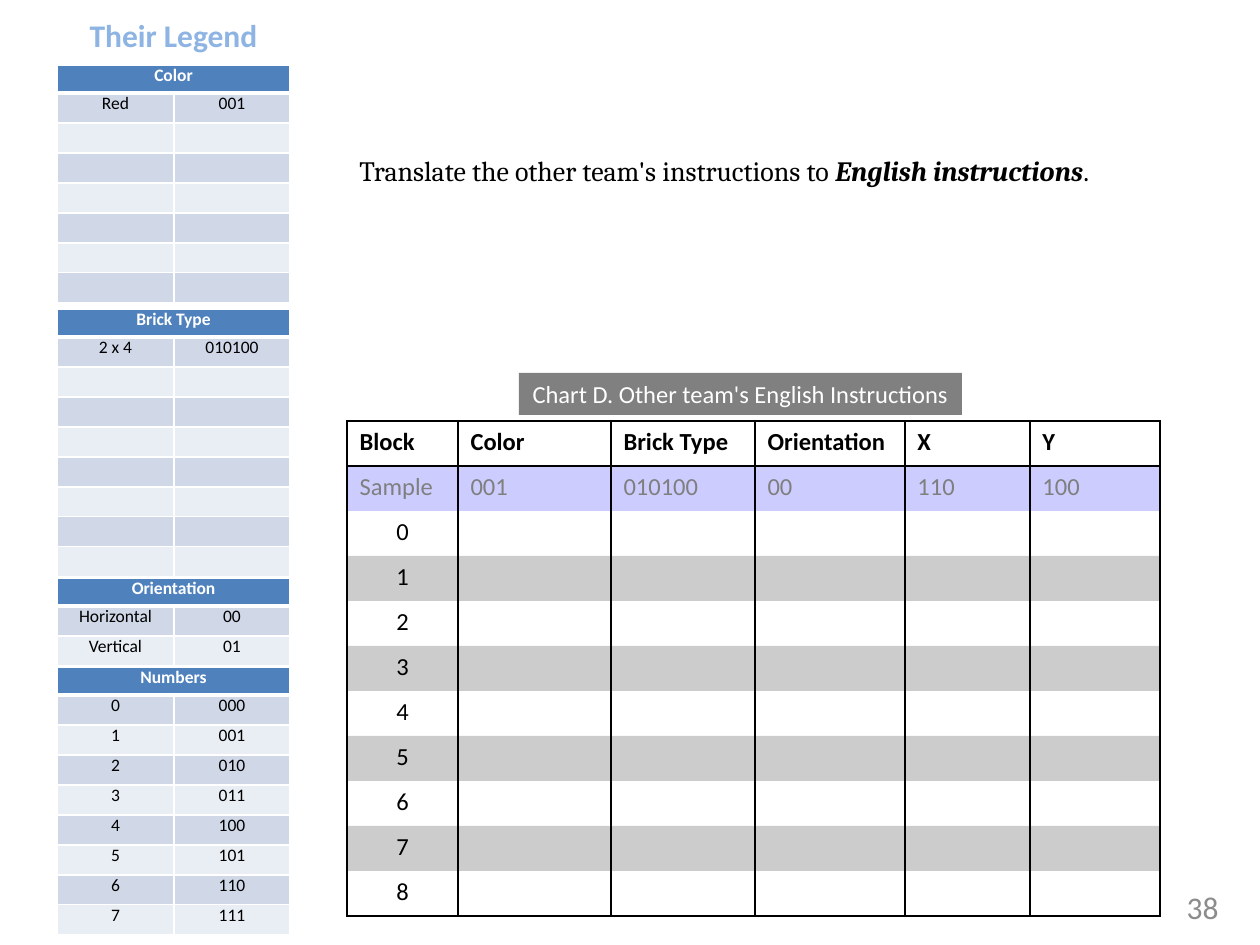
from lxml import etree
from pptx import Presentation
from pptx.dml.color import RGBColor
from pptx.enum.shapes import MSO_SHAPE
from pptx.enum.text import MSO_ANCHOR, MSO_AUTO_SIZE, PP_ALIGN
from pptx.oxml.ns import qn
from pptx.util import Pt

RECTANGLE = MSO_SHAPE.RECTANGLE
TOP, MIDDLE = MSO_ANCHOR.TOP, MSO_ANCHOR.MIDDLE
FIT, FIXED = MSO_AUTO_SIZE.SHAPE_TO_FIT_TEXT, MSO_AUTO_SIZE.NONE
LEFT, CENTER, RIGHT = PP_ALIGN.LEFT, PP_ALIGN.CENTER, PP_ALIGN.RIGHT
PX = 914400 / 126
NO_STYLE = "{2D5ABB26-0587-4C30-8999-92F81FD0307C}"

THEME = {
    "sans": "Calibri", "serif": "Cambria",
    "black": "000000", "white": "FFFFFF", "blue": "0000FF",
    "header": "4F81BD", "bands": ("D0D8E8", "E9EDF4"),
    "sample": "7F7F7F", "caption": "808080", "number": "8C8C8C", "title": "8EB4E3",
    "legend_size": 10, "chart_size": 14, "body_size": 16, "title_size": 18,
    "tint": 20000,
}


def write(paragraph, text, size, color, align=LEFT, name=THEME["sans"], **emphasis):
    """Add one run; an empty text only sets the line height."""
    paragraph.alignment = align
    if not text:
        etree.SubElement(paragraph._p, qn("a:endParaRPr"), sz=str(size * 100))
        return
    run = paragraph.add_run()
    run.text = text
    for key, value in {"size": Pt(size), "name": name, **emphasis}.items():
        setattr(run.font, key, value)
    run.font.color.rgb = RGBColor.from_string(color)


def paint_cell(cell, fill, borders, color, alpha=None):
    """Draw borders, given as side to points, and then the fill, as the schema orders them."""
    properties = cell._tc.get_or_add_tcPr()
    for side in "LRTB":
        if side in borders:
            line = etree.SubElement(properties, qn(f"a:ln{side}"), w=str(Pt(borders[side])))
            solid = etree.SubElement(line, qn("a:solidFill"))
            etree.SubElement(solid, qn("a:srgbClr"), val=color)
    if fill is None:
        cell.fill.background()
        return
    cell.fill.solid()
    cell.fill.fore_color.rgb = RGBColor.from_string(fill)
    if alpha:
        rgb = properties.find(f"{qn('a:solidFill')}/{qn('a:srgbClr')}")
        etree.SubElement(rgb, qn("a:alpha"), val=str(alpha))


prs = Presentation()
prs.slide_width, prs.slide_height = int(1260 * PX), int(945 * PX)
slide = prs.slides.add_slide(prs.slide_layouts[6])

# Each table: left, top, column widths, row heights, rows of text
BLANK = ("", "")
legends = [
    (65, "Color", [("Red", "001")] + [BLANK] * 6),
    (309, "Brick Type", [("2 x 4", "010100")] + [BLANK] * 7),
    (578, "Orientation", [("Horizontal", "00"), ("Vertical", "01")]),
    (667, "Numbers", [(str(n), f"{n:03b}") for n in range(8)]),
]
instructions = [
    ("Block", "Color", "Brick Type", "Orientation", "X", "Y"),
    ("Sample", "001", "010100", "00", "110", "100"),
] + [(str(block),) + ("",) * 5 for block in range(9)]

layouts = [(347, 421, [111, 153, 144, 150, 125, 130], [45] * 11, instructions)]
for top, heading, entries in legends:
    layouts.append((57, top, [117, 116], [28] + [30] * len(entries),
                    [(heading, "")] + entries))

tables = []
for left, top, widths, heights, rows in layouts:
    box = [int(v * PX) for v in (left, top, sum(widths), sum(heights))]
    table = slide.shapes.add_table(len(rows), len(widths), *box).table
    table._tbl.tblPr.find(qn("a:tableStyleId")).text = NO_STYLE
    for column, width in zip(table.columns, widths):
        column.width = int(width * PX)
    for row, height in zip(table.rows, heights):
        row.height = int(height * PX)
    tables.append((table, rows))

# Instruction chart
chart, chart_rows = tables[0]
last = len(chart_rows) - 1
for r, texts in enumerate(chart_rows):
    borders = {"L": 1, "R": 1}
    if r == 0:
        borders.update(T=1, B=1)
    elif r == last:
        borders["B"] = 1
    fill = THEME["blue"] if r == 1 else THEME["black"] if r > 1 and r % 2 else None
    for c, text in enumerate(texts):
        cell = chart.cell(r, c)
        write(cell.text_frame.paragraphs[0], text, THEME["chart_size"],
              THEME["sample" if r == 1 else "black"], CENTER if r > 1 else LEFT,
              bold=r == 0)
        paint_cell(cell, fill, borders, THEME["black"], THEME["tint"])

# Legend tables
for legend, rows in tables[1:]:
    legend.cell(0, 0).merge(legend.cell(0, 1))
    for r, texts in enumerate(rows):
        borders = {"L": 1, "R": 1, "T": 1 if r != 1 else 3, "B": 1 if r else 3}
        fill = THEME["bands"][(r - 1) % 2] if r else THEME["header"]
        for c, text in enumerate(texts):
            cell = legend.cell(r, c)
            for side in ("left", "right", "top", "bottom"):
                setattr(cell, f"margin_{side}", 0)
            write(cell.text_frame.paragraphs[0], text, THEME["legend_size"],
                  THEME["black" if r else "white"], CENTER, bold=r == 0)
            paint_cell(cell, fill, borders, THEME["white"])

# Free text: box, wrap, autosize, anchor, size, colour, alignment, font, runs
BOLD_ITALIC = {"bold": True, "italic": True}
notes = [
    ((347, 147, 813, 47), True, FIT, TOP, THEME["body_size"], THEME["black"], LEFT,
     THEME["serif"], [("Translate the other team's instructions to ", {}),
                      ("English instructions", BOLD_ITALIC), (".", {})]),
    ((937, 882, 294, 50), True, FIXED, MIDDLE, THEME["title_size"], THEME["number"], RIGHT,
     THEME["sans"], [("38", {})]),
    ((76, 10, 195, 50), False, FIT, TOP, THEME["title_size"], THEME["title"], CENTER,
     THEME["sans"], [("Their Legend", {"bold": True})]),
    ((519, 373, 443, 42), False, FIT, TOP, THEME["chart_size"], THEME["white"], CENTER,
     THEME["sans"], [("Chart D. Other team's English Instructions", {})]),
]
for box, wrap, fit, anchor, size, color, align, font, runs in notes:
    box = [int(v * PX) for v in box]
    if color == THEME["white"]:
        note = slide.shapes.add_shape(RECTANGLE, *box)
        note.shadow.inherit = False
        note.fill.solid()
        note.fill.fore_color.rgb = RGBColor.from_string(THEME["caption"])
        note.line.fill.background()
    else:
        note = slide.shapes.add_textbox(*box)
    frame = note.text_frame
    for key, value in {"word_wrap": wrap, "auto_size": fit, "vertical_anchor": anchor}.items():
        setattr(frame, key, value)
    for text, emphasis in runs:
        write(frame.paragraphs[0], text, size, color, align, font, **emphasis)

prs.save("out.pptx")
